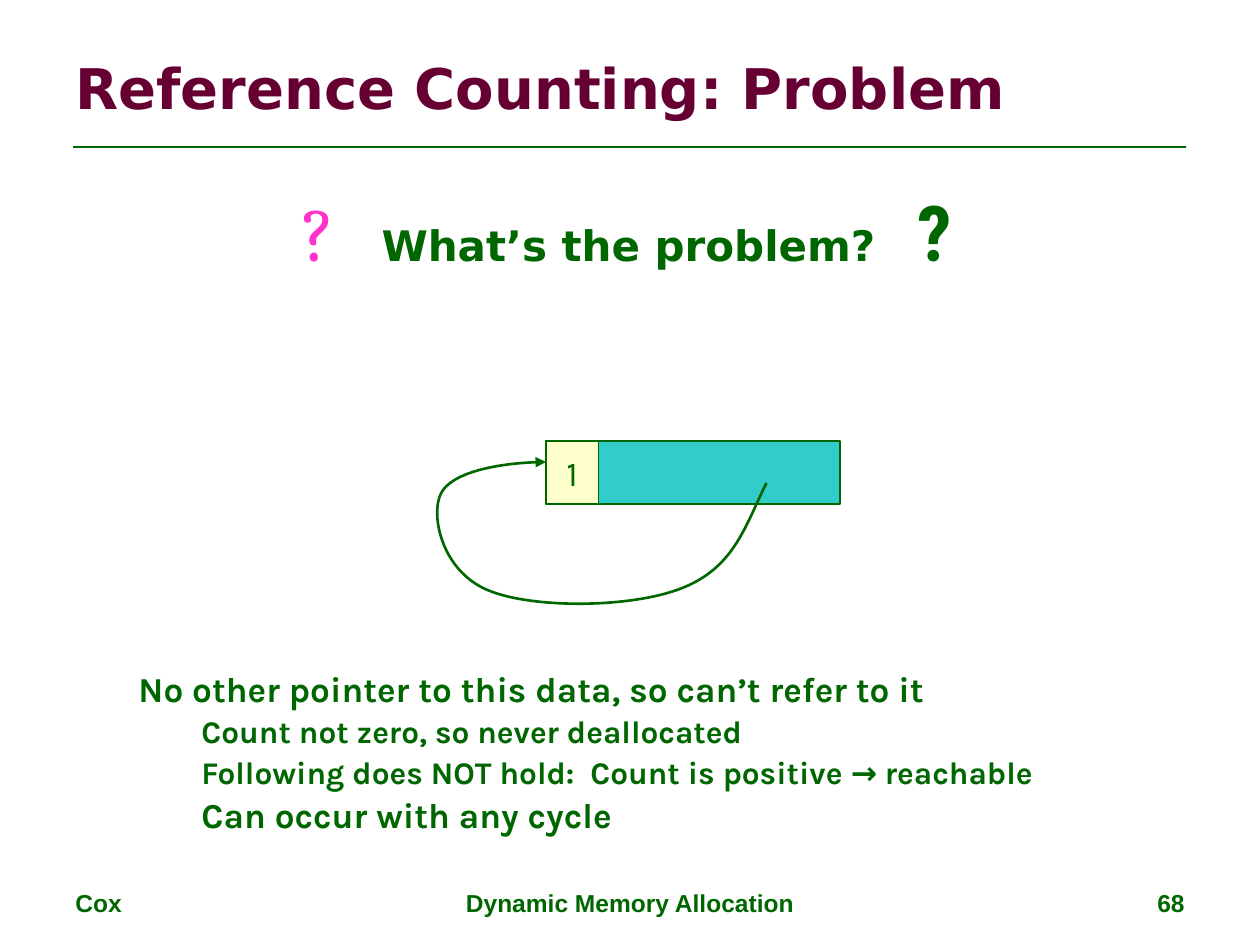
from dataclasses import dataclass

import pptx
import pptx.dml.color
import pptx.enum.shapes
import pptx.enum.text
import pptx.oxml
import pptx.oxml.ns
import pptx.util

COLOURS = {"green": "006600", "plum": "660033", "pink": "FF33CC",
           "teal": "33CCCC", "cream": "FFFFCC"}
ALIGN = pptx.enum.text.PP_ALIGN
ANCHOR = pptx.enum.text.MSO_ANCHOR
CELL = pptx.util.Inches(1 / 12)  # grid of 120 columns by 90 rows
qn = pptx.oxml.ns.qn


@dataclass
class Box:
    col: float
    row: float
    cols: float
    rows: float

    def emu(self) -> list[int]:
        return [round(n * CELL) for n in (self.col, self.row, self.cols, self.rows)]


@dataclass
class Run:
    text: str
    size: float
    font: str = "Karla"
    colour: str = "green"
    bold: bool = True


@dataclass
class Footer:
    text: str
    box: Box
    align: ALIGN


def rgb(name: str) -> pptx.dml.color.RGBColor:
    return pptx.dml.color.RGBColor.from_string(COLOURS[name])


def xml(tag: str, **attributes: str):
    element = pptx.oxml.parse_xml(f"<{tag} {pptx.oxml.ns.nsdecls('a')}/>")
    for key, value in attributes.items():
        element.set(key, value)
    return element


def write(frame, paragraphs: list[list[Run]], *, align=ALIGN.LEFT, anchor=ANCHOR.TOP,
          wrap: bool = True, indent: float = 0, tabs: tuple = ()) -> None:
    """Fill a frame; indent (inches) applies to paragraphs after the first."""
    frame.word_wrap = wrap
    frame.vertical_anchor = anchor
    for i, runs in enumerate(paragraphs):
        paragraph = frame.add_paragraph() if i else frame.paragraphs[0]
        paragraph.alignment = align
        properties = paragraph._p.get_or_add_pPr()
        if i:
            properties.set("marL", str(pptx.util.Inches(indent)))
            paragraph.line_spacing = 0.9
            paragraph.space_before = pptx.util.Pt(4)
        if tabs:
            stops = xml("a:tabLst")
            for position in tabs:
                stops.append(xml("a:tab", pos=str(pptx.util.Inches(position)), algn="ctr"))
            properties.append(stops)
        for part in runs:
            run = paragraph.add_run()
            run.text = part.text
            run.font.size = pptx.util.Pt(part.size)
            run.font.name = part.font
            run.font.bold = part.bold
            run.font.color.rgb = rgb(part.colour)


def add_text(slide, box: Box, paragraphs: list[list[Run]], **layout) -> None:
    write(slide.shapes.add_textbox(*box.emu()).text_frame, paragraphs, **layout)


def outline(shape, width: float) -> None:
    shape.line.color.rgb = rgb("green")
    shape.line.width = pptx.util.Pt(width)


def add_block(slide, box: Box, fill: str):
    block = slide.shapes.add_shape(pptx.enum.shapes.MSO_SHAPE.RECTANGLE, *box.emu())
    block.shadow.inherit = False
    block.fill.solid()
    block.fill.fore_color.rgb = rgb(fill)
    outline(block, 0.75)
    return block


def add_curved_arrow(slide, points: list[tuple[float, float]]) -> None:
    """Draw Bezier segments: a start, then two controls and an end for each."""
    builder = slide.shapes.build_freeform(*points[0], scale=CELL)
    builder.add_line_segments(points[1:], close=False)
    curve = builder.convert_to_shape()
    curve.shadow.inherit = False
    curve.fill.background()
    outline(curve, 1.5)
    curve.line._get_or_add_ln().append(xml("a:tailEnd", type="triangle"))
    # Turn each three straight segments into one cubic segment
    path = next(curve._element.iter(qn("a:path")))
    segments = path.findall(qn("a:lnTo"))
    for start in range(0, len(segments), 3):
        cubic = xml("a:cubicBezTo")
        for segment in segments[start:start + 3]:
            cubic.append(segment[0])
            path.remove(segment)
        path.append(cubic)


def add_rule(slide, left: float, right: float, row: float) -> None:
    x1, x2, y = (round(n * CELL) for n in (left, right, row))
    rule = slide.shapes.add_connector(
        pptx.enum.shapes.MSO_CONNECTOR.STRAIGHT, x1, y, x2, y)
    outline(rule, 1.5)
    rule._element.spPr.append(xml("a:effectLst"))


FOOTERS = [
    Footer("Cox", Box(6, 84, 28, 4.2), ALIGN.LEFT),
    Footer("Dynamic Memory Allocation", Box(41, 84, 38, 4.2), ALIGN.CENTER),
    Footer("68", Box(86, 84, 28, 4.2), ALIGN.RIGHT),
]
QUESTION = [
    Run("\t?", 44, "Cambria", "pink", False),
    Run("\tWhat’s the problem?", 24, "DejaVu Sans"),
    Run("\t?", 44, "Roboto Condensed"),
]
EXPLANATION = [
    [Run("No other pointer to this data, so can’t refer to it", 20)],
    [Run("Count not zero, so never deallocated", 18)],
    [Run("Following does NOT hold:  Count is positive → reachable", 18)],
    [Run("Can occur with any cycle", 20)],
]
SELF_POINTER = [
    (73, 46),
    (71.3, 50.2), (69.5, 54.4), (65, 56),
    (60.5, 57.7), (49.8, 57.5), (46, 56),
    (42.1, 54.5), (41, 49), (42, 47),
    (43, 45), (47.5, 44.5), (52, 44),
]


def main() -> None:
    deck = pptx.Presentation()
    deck.slide_width, deck.slide_height = 120 * CELL, 90 * CELL
    slide = deck.slides.add_slide(deck.slide_layouts[6])

    # Rule, footers and title
    add_rule(slide, 7, 113, 14)
    for footer in FOOTERS:
        add_text(slide, footer.box, [[Run(footer.text, 14, "Arial")]], align=footer.align)
    add_text(slide, Box(6, 3.6, 108, 9.4),
             [[Run("Reference Counting: Problem", 32, "DejaVu Sans", "plum")]],
             anchor=ANCHOR.MIDDLE)

    # Question
    add_text(slide, Box(6, 17, 108, 10.5), [QUESTION], tabs=(1.93, 4.39, 6.82))

    # Data block with its count, pointing to itself
    add_block(slide, Box(52, 42, 28, 6), "teal")
    count = add_block(slide, Box(52, 42, 5, 6), "cream")
    write(count.text_frame, [[Run("1", 20, bold=False)]],
          align=ALIGN.CENTER, anchor=ANCHOR.MIDDLE, wrap=False)
    add_curved_arrow(slide, SELF_POINTER)

    # Explanation
    add_text(slide, Box(12, 63, 99, 17.5), EXPLANATION, indent=0.5)

    deck.save("out.pptx")


if __name__ == "__main__":
    main()
